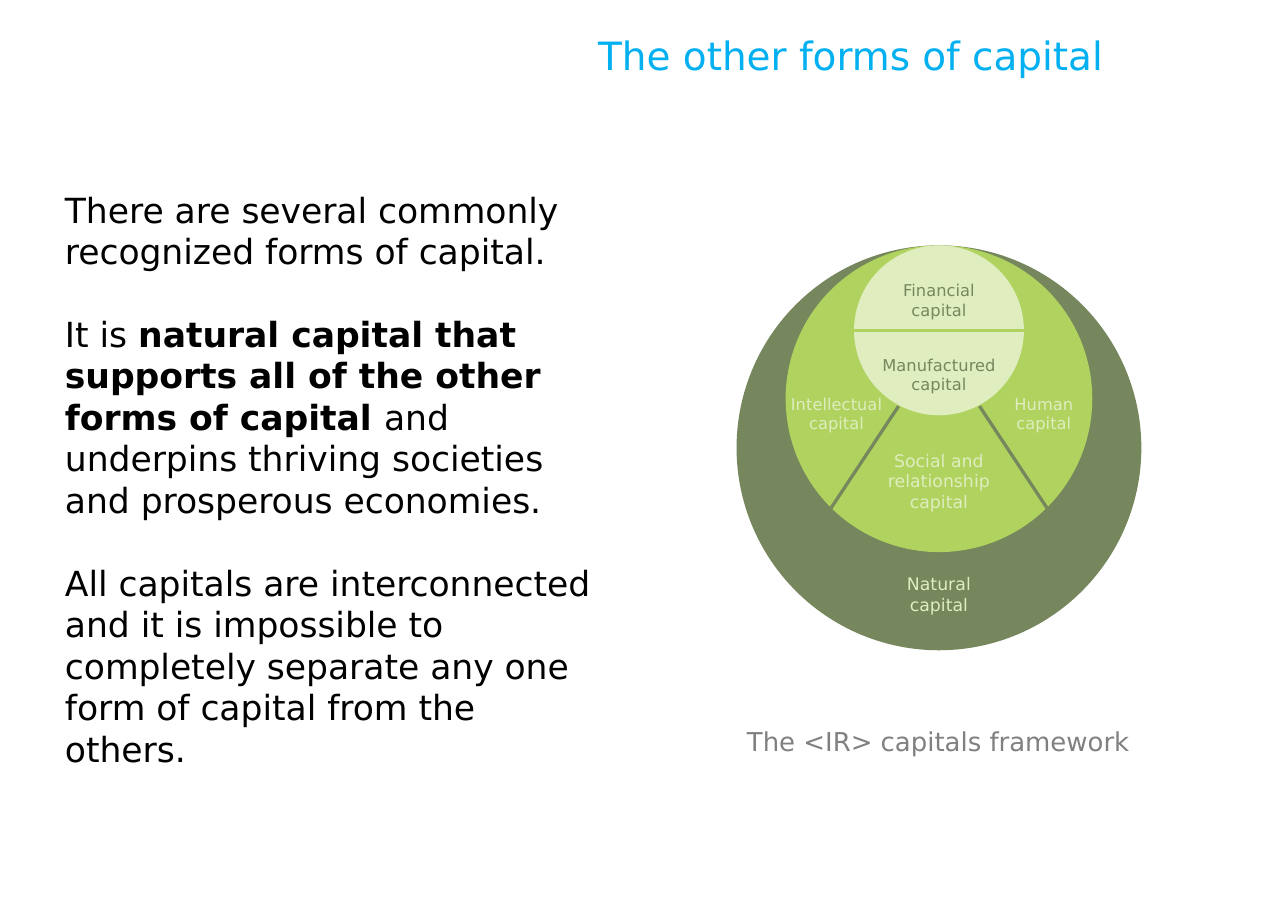
from lxml import etree
from pptx import Presentation
from pptx.dml.color import RGBColor
from pptx.enum import shapes, text
from pptx.oxml.ns import qn
from pptx.util import Cm, Pt

FONT = "DejaVu Sans"
COLORS = {
    "title": "00B0F0", "body": "000000", "caption": "808080",
    "dark": "76865D", "mid": "B0D360", "light": "DFEDBF",
}

TITLE = "The other forms of capital"
CAPTION = "The <IR> capitals framework"
# Each paragraph is a list of (text, bold) runs.
BODY = [
    [("There are several commonly recognized forms of capital.", False)],
    [("It is ", False),
     ("natural capital that supports all of the other forms of capital ", True),
     ("and underpins thriving societies and prosperous economies.", False)],
    [("All capitals are interconnected and it is impossible to completely "
      "separate any one form of capital from the others.", False)],
]

# Diagram in cm: circles share a top point, x positions are offsets from the axis.
AXIS, TOP = 15.31, 4.0
CIRCLES = [(6.6, "dark"), (5.0, "mid"), (2.77, "light")]
INNER_RADIUS = CIRCLES[-1][0] / 2
MIDDLE = TOP + INNER_RADIUS
DIVIDERS = [  # x1, y1, x2, y2, color
    (-INNER_RADIUS, MIDDLE, INNER_RADIUS, MIDDLE, "mid"),
    (-1.76, 8.28, -0.66, 6.62, "dark"),
    (1.76, 8.28, 0.66, 6.62, "dark"),
]
LABELS = [  # text, x offset, top, width, height, size, color
    ("Financial capital", 0, 4.45, 2.21, 0.89, 7.5, "dark"),
    ("Manufactured capital", 0, 5.66, 2.62, 0.89, 7.5, "dark"),
    ("Intellectual capital", -1.67, 6.3, 2.03, 0.89, 7.5, "light"),
    ("Social and relationship capital", 0, 7.21, 2.62, 1.27, 8, "light"),
    ("Human capital", 1.71, 6.3, 1.63, 0.89, 7.5, "light"),
    ("Natural capital", 0, 9.22, 1.98, 0.94, 8, "light"),
]


def rgb(name):
    return RGBColor.from_string(COLORS[name])


def format_runs(p, size, color):
    for r in p.runs:
        r.font.name = FONT
        r.font.size = Pt(size)
        r.font.color.rgb = rgb(color)


def add_text(parent, box, paragraphs, size, color, align, gap=0):
    """Add a wrapped text box; gap is the space in points between paragraphs."""
    tf = parent.add_textbox(*[Cm(v) for v in box]).text_frame
    tf.word_wrap = True
    for i, runs in enumerate(paragraphs):
        p = tf.paragraphs[0] if i == 0 else tf.add_paragraph()
        p.alignment = align
        if i:
            p.space_before = Pt(gap)
        for content, bold in runs:
            r = p.add_run()
            r.text = content
            r.font.bold = bold
        format_runs(p, size, color)


def add_title(slide):
    sp = slide.shapes.title
    sp.left, sp.top, sp.width, sp.height = Cm(9.5), Cm(0.48), Cm(11), Cm(0.94)
    tf = sp.text_frame
    tf.text = TITLE
    tf.auto_size = text.MSO_AUTO_SIZE.NONE
    tf.vertical_anchor = text.MSO_ANCHOR.MIDDLE
    p = tf.paragraphs[0]
    p.alignment = text.PP_ALIGN.LEFT
    p.line_spacing = 0.9
    format_runs(p, 18, "title")


def add_diagram(slide):
    group = slide.shapes.add_group_shape().shapes
    for size, color in CIRCLES:
        sp = group.add_shape(shapes.MSO_SHAPE.OVAL, Cm(AXIS - size / 2),
                             Cm(TOP), Cm(size), Cm(size))
        sp.shadow.inherit = False
        sp.fill.solid()
        sp.fill.fore_color.rgb = rgb(color)
        sp.line.fill.background()
    for x1, y1, x2, y2, color in DIVIDERS:
        line = group.add_connector(shapes.MSO_CONNECTOR.STRAIGHT, Cm(AXIS + x1),
                                   Cm(y1), Cm(AXIS + x2), Cm(y2))
        line.line.color.rgb = rgb(color)
        line.line.width = Pt(1.5)
        etree.SubElement(line._element.spPr, qn("a:effectLst"))
    for label, dx, top, width, height, size, color in LABELS:
        box = (AXIS + dx - width / 2, top, width, height)
        add_text(group, box, [[(label, False)]], size, color, text.PP_ALIGN.CENTER)


def main():
    prs = Presentation()
    prs.slide_width, prs.slide_height = Cm(21), Cm(14.8)
    slide = prs.slides.add_slide(prs.slide_layouts.get_by_name("Title Only"))
    add_title(slide)
    add_text(slide.shapes, (0.81, 2.95, 9.17, 9.83), BODY, 16, "body",
             text.PP_ALIGN.LEFT, gap=19)
    add_text(slide.shapes, (10.46, 11.7, 9.68, 0.75), [[(CAPTION, False)]], 12,
             "caption", text.PP_ALIGN.CENTER)
    add_diagram(slide)
    prs.save("out.pptx")


if __name__ == "__main__":
    main()
